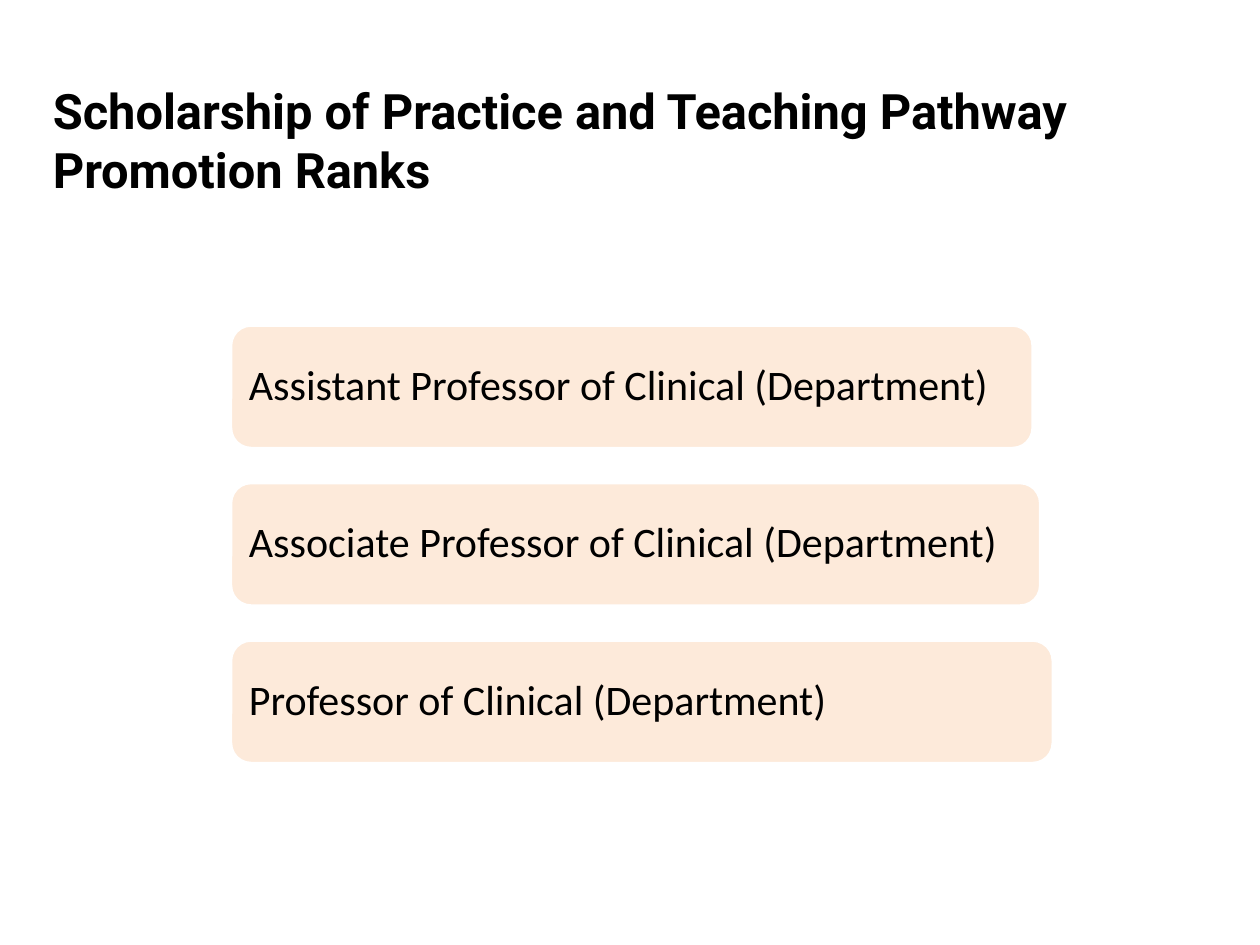
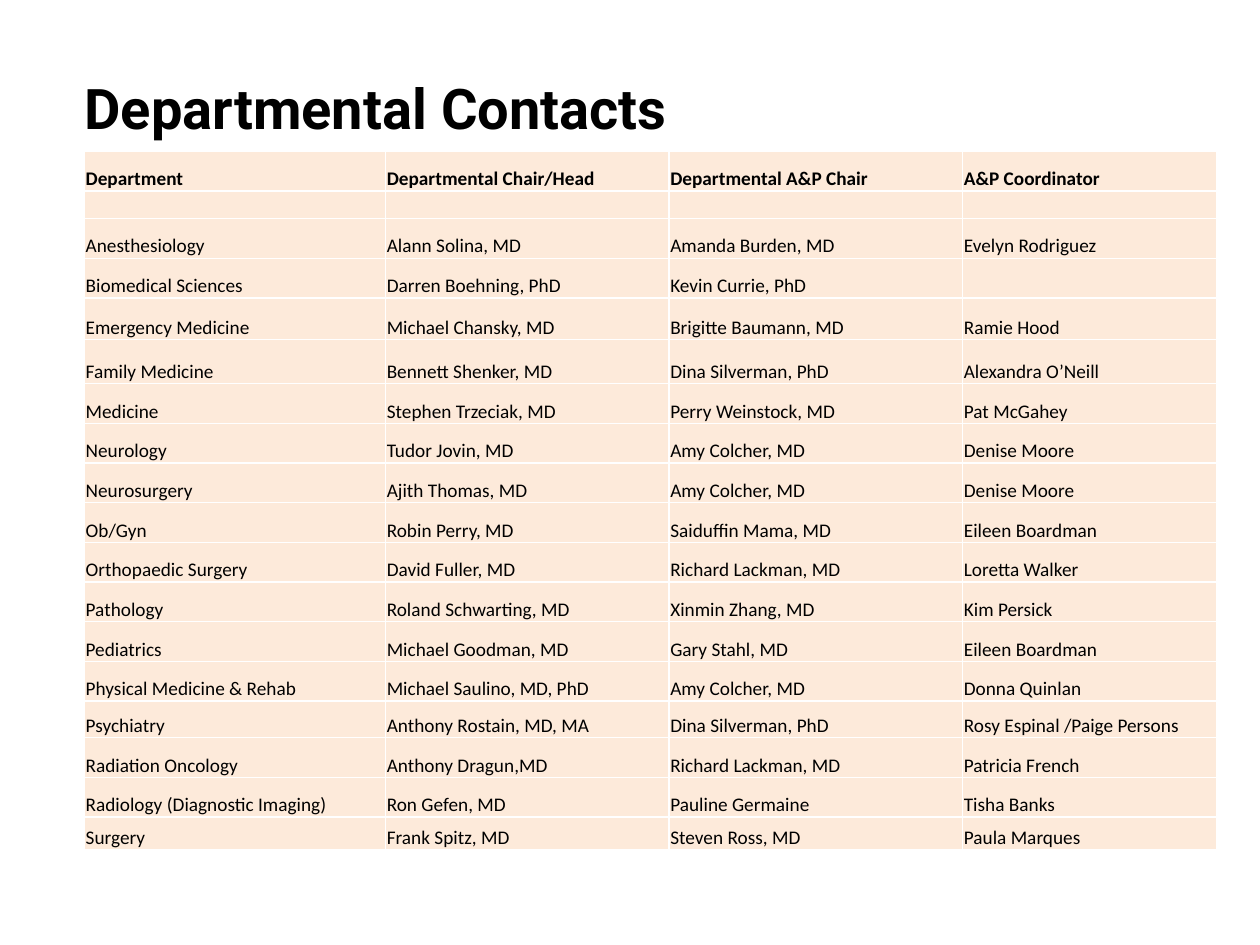
import lxml.etree
import pptx
import pptx.dml.color
import pptx.enum.shapes
import pptx.enum.text
import pptx.oxml.ns
import pptx.util
from dataclasses import dataclass
from pptx.util import Inches

# Content
RANKS_TITLE = ["Scholarship of Practice and Teaching Pathway", "Promotion Ranks"]
RANKS = [  # text, bar width
    ("Assistant Professor of Clinical (Department)", 6.37),
    ("Associate Professor of Clinical (Department)", 6.43),
    ("Professor of Clinical (Department)", 6.53),
]

CONTACTS_TITLE = ["Departmental Contacts"]
CONTACTS = [
    ("Department", "Departmental Chair/Head", "Departmental A&P Chair", "A&P Coordinator"),
    ("", "", "", ""),
    ("Anesthesiology", "Alann Solina, MD", "Amanda Burden, MD", "Evelyn Rodriguez"),
    ("Biomedical Sciences", "Darren Boehning, PhD", "Kevin Currie, PhD", ""),
    ("Emergency Medicine", "Michael Chansky, MD", "Brigitte Baumann, MD", "Ramie Hood"),
    ("Family Medicine", "Bennett Shenker, MD", "Dina Silverman, PhD", "Alexandra O’Neill"),
    ("Medicine", "Stephen Trzeciak, MD", "Perry Weinstock, MD", "Pat McGahey"),
    ("Neurology", "Tudor Jovin, MD", "Amy Colcher, MD", "Denise Moore"),
    ("Neurosurgery", "Ajith Thomas, MD", "Amy Colcher, MD", "Denise Moore"),
    ("Ob/Gyn", "Robin Perry, MD", "Saiduffin Mama, MD", "Eileen Boardman"),
    ("Orthopaedic Surgery", "David Fuller, MD", "Richard Lackman, MD", "Loretta Walker"),
    ("Pathology", "Roland Schwarting, MD", "Xinmin Zhang, MD", "Kim Persick"),
    ("Pediatrics", "Michael Goodman, MD", "Gary Stahl, MD", "Eileen Boardman"),
    ("Physical Medicine & Rehab", "Michael Saulino, MD, PhD", "Amy Colcher, MD", "Donna Quinlan"),
    ("Psychiatry", "Anthony Rostain, MD, MA", "Dina Silverman, PhD", "Rosy Espinal /Paige Persons"),
    ("Radiation Oncology", "Anthony Dragun,MD", "Richard Lackman, MD", "Patricia French"),
    ("Radiology (Diagnostic Imaging)", "Ron Gefen, MD", "Pauline Germaine", "Tisha Banks"),
    ("Surgery", "Frank Spitz, MD", "Steven Ross, MD", "Paula Marques"),
]
CONTACT_WIDTHS = [2.39, 2.25, 2.33, 2.02]
ROW_HEIGHT = 0.315
SPECIAL_HEIGHTS = {1: 0.22, 4: 0.33, 5: 0.35, 14: 0.29, 17: 0.26}


@dataclass(frozen=True)
class Theme:
    ink: str = "000000"
    peach: str = "FDEADA"
    white: str = "FFFFFF"
    title_font: str = "Roboto"
    body_font: str = "Calibri"
    ranks_title_size: float = 27.9
    contacts_title_size: float = 32
    rank_size: float = 24
    contact_size: float = 11


THEME = Theme()


def rgb(value):
    return pptx.dml.color.RGBColor.from_string(value)


def fill_with(part, color):
    part.fill.solid()
    part.fill.fore_color.rgb = rgb(color)


def add_run(paragraph, text, font_name, size, bold=False):
    run = paragraph.add_run()
    run.text = text
    run.font.name = font_name
    run.font.size = pptx.util.Pt(size)
    run.font.bold = bold
    run.font.color.rgb = rgb(THEME.ink)


def set_margins(part, side, top, bottom):
    part.margin_left = part.margin_right = Inches(side)
    part.margin_top, part.margin_bottom = Inches(top), Inches(bottom)


def add_title(slide, lines, box, size):
    frame = slide.shapes.add_textbox(*map(Inches, box)).text_frame
    frame.word_wrap = True
    set_margins(frame, 0, 0, 0)
    paragraph = frame.paragraphs[0]
    for index, line in enumerate(lines):
        if index:
            paragraph.add_line_break()
        add_run(paragraph, line, THEME.title_font, size, bold=True)


def border_cell(cell):
    properties = cell._tc.get_or_add_tcPr()
    qn = pptx.oxml.ns.qn
    for position, side in enumerate(("a:lnL", "a:lnR", "a:lnT", "a:lnB")):
        line = lxml.etree.Element(qn(side), w=str(pptx.util.Pt(1)))
        solid = lxml.etree.SubElement(line, qn("a:solidFill"))
        lxml.etree.SubElement(solid, qn("a:srgbClr"), val=THEME.white)
        properties.insert(position, line)


def add_rank(slide, text, top, width):
    bar = slide.shapes.add_shape(
        pptx.enum.shapes.MSO_SHAPE.ROUNDED_RECTANGLE,
        Inches(1.83), Inches(top), Inches(width), Inches(0.98))
    bar.shadow.inherit = False
    fill_with(bar, THEME.peach)
    bar.line.color.rgb = rgb(THEME.white)
    bar.line.width = pptx.util.Pt(2)
    frame = bar.text_frame
    frame.word_wrap = True
    frame.vertical_anchor = pptx.enum.text.MSO_ANCHOR.MIDDLE
    set_margins(frame, 0.1, 0.1, 0.1)
    paragraph = frame.paragraphs[0]
    paragraph.alignment = pptx.enum.text.PP_ALIGN.LEFT
    paragraph.line_spacing = 0.9
    add_run(paragraph, text, THEME.body_font, THEME.rank_size)


def fill_contact(cell, text, bold):
    fill_with(cell, THEME.peach)
    border_cell(cell)
    set_margins(cell, 0.01, 0.01, 0)
    cell.vertical_anchor = pptx.enum.text.MSO_ANCHOR.BOTTOM
    paragraph = cell.text_frame.paragraphs[0]
    if text:
        add_run(paragraph, text, THEME.body_font, THEME.contact_size, bold)
    else:  # keeps an empty row from growing to the default type size
        lxml.etree.SubElement(paragraph._p, pptx.oxml.ns.qn("a:endParaRPr"),
                              sz=str(THEME.contact_size * 100))


def build_ranks(slide):
    add_title(slide, RANKS_TITLE, (0.42, 0.64, 8.5, 1.17), THEME.ranks_title_size)
    for index, (text, width) in enumerate(RANKS):
        add_rank(slide, text, 2.58 + 1.25 * index, width)


def build_contacts(slide):
    add_title(slide, CONTACTS_TITLE, (0.67, 0.58, 8.62, 0.58), THEME.contacts_title_size)
    heights = [SPECIAL_HEIGHTS.get(i, ROW_HEIGHT) for i in range(len(CONTACTS))]
    contacts = slide.shapes.add_table(
        len(CONTACTS), len(CONTACT_WIDTHS), Inches(0.67), Inches(1.2),
        Inches(sum(CONTACT_WIDTHS)), Inches(sum(heights))).table
    contacts.horz_banding = False
    for column, width in zip(contacts.columns, CONTACT_WIDTHS):
        column.width = Inches(width)
    for r, (names, height) in enumerate(zip(CONTACTS, heights)):
        contacts.rows[r].height = Inches(height)
        for c, name in enumerate(names):
            fill_contact(contacts.cell(r, c), name, bold=r == 0)


def main():
    deck = pptx.Presentation()
    deck.slide_width, deck.slide_height = Inches(10), Inches(7.5)
    for build in (build_ranks, build_contacts):
        slide = deck.slides.add_slide(deck.slide_layouts[6])
        fill_with(slide.background, THEME.white)
        build(slide)
    deck.save("out.pptx")


if __name__ == "__main__":
    main()
